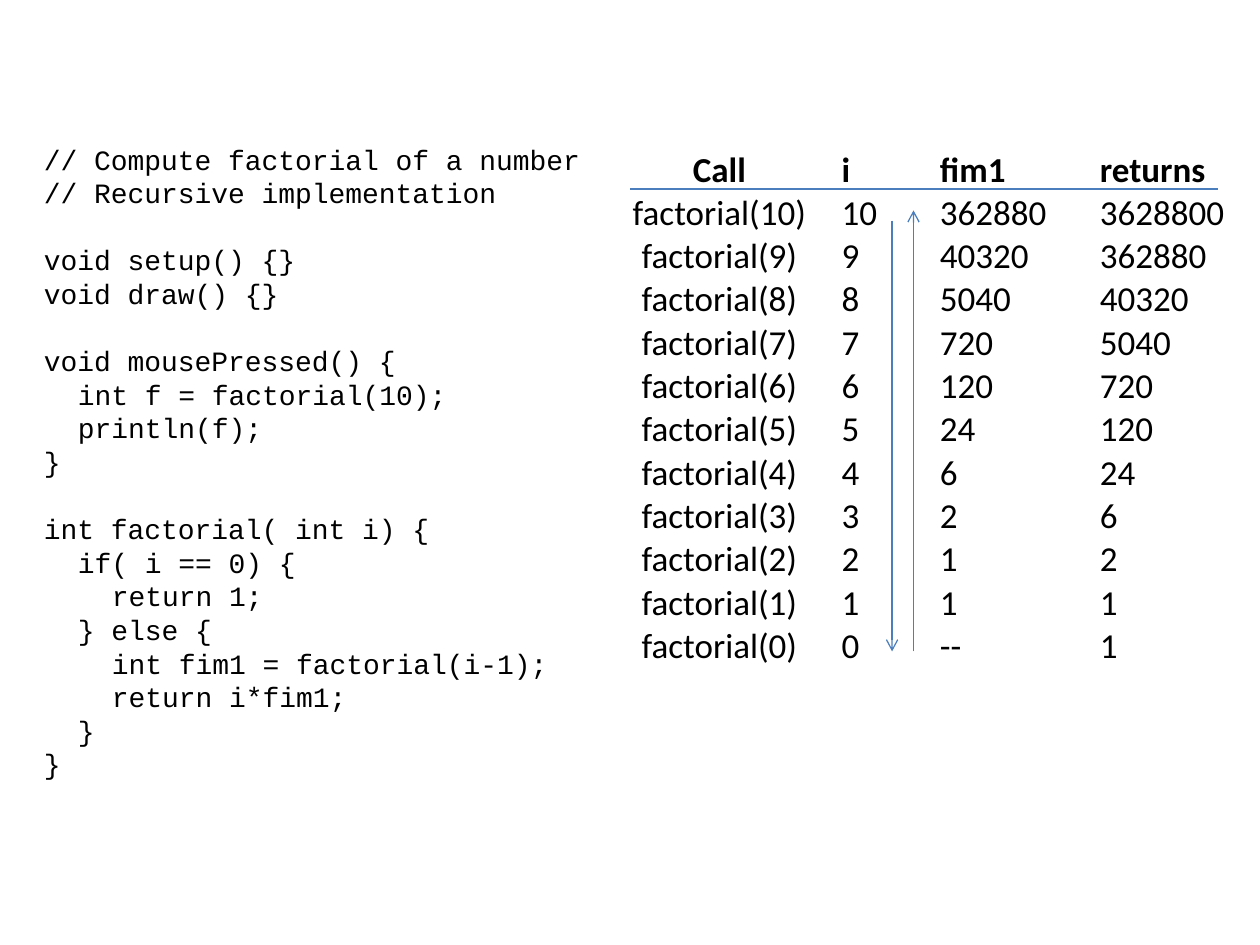
from dataclasses import dataclass
from math import factorial

from lxml.etree import SubElement
from pptx import Presentation
from pptx.dml.color import RGBColor
from pptx.enum.shapes import MSO_CONNECTOR as Connector
from pptx.enum.text import MSO_ANCHOR as Anchor, PP_ALIGN as Align
from pptx.oxml.ns import qn
from pptx.util import Inches, Pt


@dataclass(frozen=True)
class Theme:
    text: RGBColor = RGBColor(0, 0, 0)
    line: RGBColor = RGBColor(0x4B, 0x7E, 0xBC)
    code_font: str = "Courier New"
    table_font: str = "Calibri"
    code_size: Pt = Pt(16)
    table_size: Pt = Pt(20)
    line_width: Pt = Pt(0.75)
    code_gap: Pt = Pt(19.2)
    code_indent: Inches = Inches(0.27)


THEME = Theme()
CODE = """// Compute factorial of a number
// Recursive implementation

void setup() {}
void draw() {}

void mousePressed() {
  int f = factorial(10);
  println(f);
}

int factorial( int i) {
  if( i == 0) {
    return 1;
  } else {
    int fim1 = factorial(i-1);
    return i*fim1;
  }
}"""
HEADINGS = ("Call", "i", "fim1", "returns")
COLUMN_WIDTHS = (1.92, 0.78, 1.27, 1.12)
FIRST_CALL = 10


def apply(target, values):
    for name, value in values.items():
        setattr(target, name, value)


def write(para, text, font, size, bold=False):
    span = para.add_run()
    span.text = text
    apply(span.font, {"name": font, "size": size, "bold": bold})
    span.font.color.rgb = THEME.text


def add_code(page, left, top, width, height):
    box = page.shapes.add_textbox(*map(Inches, (left, top, width, height)))
    frame = box.text_frame
    frame.word_wrap = True
    for block_number, block in enumerate(CODE.split("\n\n")):
        for line_number, line in enumerate(block.split("\n")):
            is_first = block_number == line_number == 0
            para = frame.paragraphs[0] if is_first else frame.add_paragraph()
            if block_number and not line_number:
                para.space_before = THEME.code_gap
            text = line.lstrip()
            depth = (len(line) - len(text)) // 2
            if depth:
                para._p.get_or_add_pPr().set("marL", str(depth * THEME.code_indent))
            write(para, text, THEME.code_font, THEME.code_size)


def call_rows():
    for i in range(FIRST_CALL, -1, -1):
        previous = str(factorial(i - 1)) if i else "--"
        yield f"factorial({i})", str(i), previous, str(factorial(i))


def add_calls(page, left, top, width, height):
    rows = [HEADINGS, *call_rows()]
    area = map(Inches, (left, top, width, height))
    table = page.shapes.add_table(len(rows), len(HEADINGS), *area).table
    apply(table, {"first_row": False, "horz_banding": False})
    for column, column_width in zip(table.columns, COLUMN_WIDTHS):
        column.width = Inches(column_width)
    cell_format = {
        "vertical_anchor": Anchor.BOTTOM,
        "margin_left": Inches(0.01),
        "margin_right": Inches(0.01),
        "margin_top": Inches(0.01),
        "margin_bottom": 0,
    }
    for row_number, row in enumerate(rows):
        for column_number, text in enumerate(row):
            cell = table.cell(row_number, column_number)
            apply(cell, cell_format)
            cell.fill.background()
            para = cell.text_frame.paragraphs[0]
            para.alignment = Align.LEFT if column_number else Align.CENTER
            write(para, text, THEME.table_font, THEME.table_size, row_number == 0)


def add_line(page, start, end, arrow=False):
    line = page.shapes.add_connector(Connector.STRAIGHT, *map(Inches, (*start, *end)))
    line.line.color.rgb = THEME.line
    line.line.width = THEME.line_width
    if arrow:
        SubElement(line.line._get_or_add_ln(), qn("a:tailEnd"), type="arrow")
    SubElement(line._element.spPr, qn("a:effectLst"))


def add_guides(page, left, top, width, height):
    bottom = top + height
    add_line(page, (left + 2.08, top + 0.25), (left + 2.08, bottom), arrow=True)
    add_line(page, (left + 2.25, bottom), (left + 2.25, top + 0.17), arrow=True)
    add_line(page, (left, top), (left + width, top))


def main():
    deck = Presentation()
    apply(deck, {"slide_width": Inches(10), "slide_height": Inches(7.5)})
    page = deck.slides.add_slide(deck.slide_layouts[6])
    add_code(page, 0.25, 1.08, 5.42, 5.22)
    add_calls(page, 4.75, 1.17, 5.09, 4.12)
    add_guides(page, 5, 1.5, 4.67, 3.67)
    deck.save("out.pptx")


if __name__ == "__main__":
    main()
